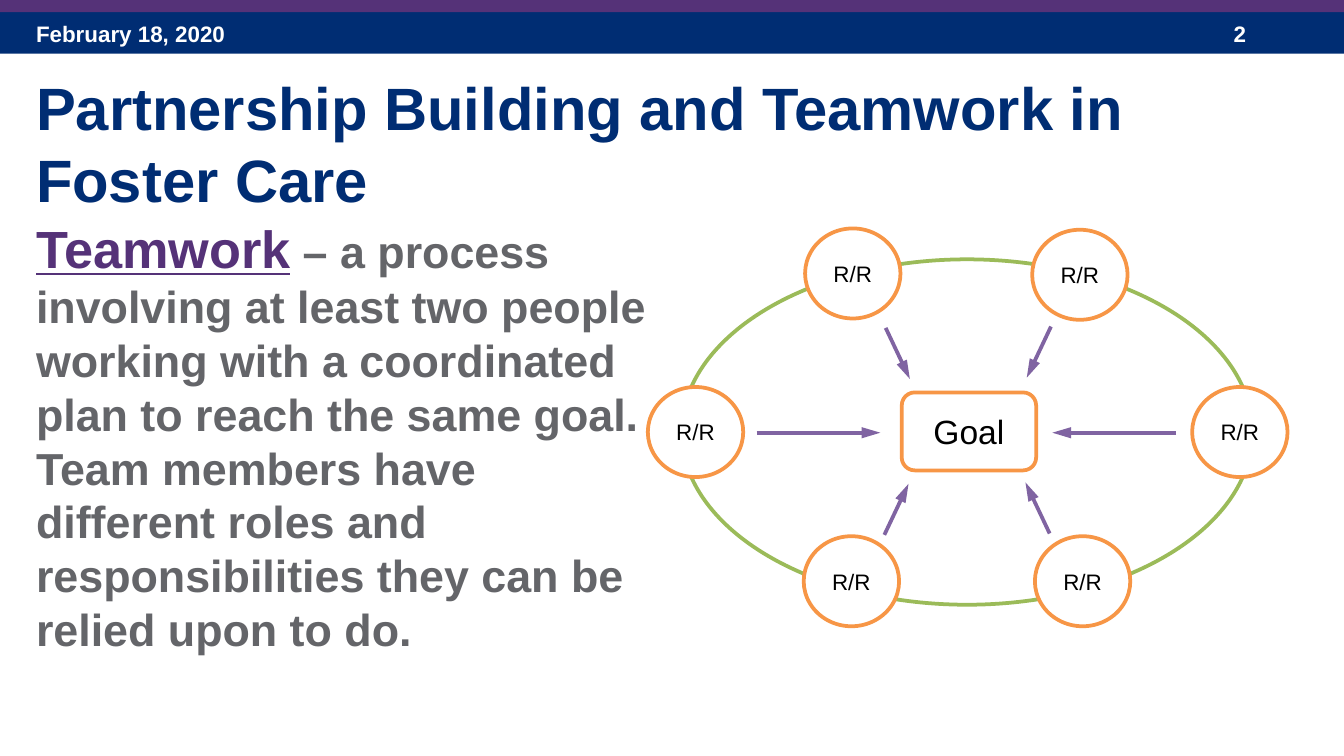
from lxml import etree
from pptx import Presentation
from pptx.dml.color import RGBColor
from pptx.enum import shapes, text
from pptx.oxml.ns import qn
from pptx.util import Inches, Pt

COLORS = {
    "navy": "002D73",
    "purple": "553278",
    "gray": "646569",
    "white": "FFFFFF",
    "black": "000000",
    "green": "9BBB59",
    "orange": "F79646",
    "violet": "8064A2",
}
NODE_SIZE = (0.71, 0.67)
NODES = [(4.82, 2.88), (5.98, 3.99), (7.7, 3.99),
         (8.87, 2.88), (7.68, 1.71), (5.99, 1.7)]
ARROWS = [
    (6.59, 2.44, 6.77, 2.82),
    (8.75, 3.22, 7.83, 3.22),
    (7.82, 2.43, 7.64, 2.81),
    (5.63, 3.22, 6.55, 3.22),
    (6.58, 3.98, 6.76, 3.6),
    (7.81, 3.97, 7.63, 3.59),
]


def color(name):
    return RGBColor.from_string(COLORS[name])


def style_font(font, size, color_name, bold=False):
    font.name = "Arial"
    font.size = Pt(size)
    font.bold = bold
    font.color.rgb = color(color_name)


def add_figure(slide, kind, box, fill, outline=None):
    figure = slide.shapes.add_shape(kind, *map(Inches, box))
    figure.shadow.inherit = False
    figure.fill.solid()
    figure.fill.fore_color.rgb = color(fill)
    if outline:
        figure.line.color.rgb = color(outline)
        figure.line.width = Pt(2)
    else:
        figure.line.fill.background()
    return figure


def add_label(figure, wording, size):
    frame = figure.text_frame
    frame.margin_left = frame.margin_right = 0
    frame.margin_top = frame.margin_bottom = 0
    frame.vertical_anchor = text.MSO_ANCHOR.MIDDLE
    label = frame.paragraphs[0]
    label.text = wording
    label.alignment = text.PP_ALIGN.CENTER
    style_font(label.font, size, "black")


def add_text(slide, box, wording, size, color_name):
    frame = slide.shapes.add_textbox(*map(Inches, box)).text_frame
    frame.word_wrap = True
    line = frame.paragraphs[0]
    line.text = wording
    style_font(line.font, size, color_name, bold=True)
    return line


def add_definition(slide, box, term, meaning):
    definition = add_text(slide, box, "", 24, "gray")
    keyword = definition.add_run()
    keyword.text = term
    style_font(keyword.font, 28, "purple", bold=True)
    keyword.font.underline = True
    definition.add_run().text = meaning


def add_arrow(slide, ends):
    arrow = slide.shapes.add_connector(
        shapes.MSO_CONNECTOR.STRAIGHT, *map(Inches, ends))
    arrow.line.color.rgb = color("violet")
    arrow.line.width = Pt(2)
    etree.SubElement(arrow.line._get_or_add_ln(), qn("a:tailEnd"),
                     type="triangle", w="med", len="lg")
    etree.SubElement(arrow._element.spPr, qn("a:effectLst"))


def add_header(slide):
    rectangle = shapes.MSO_SHAPE.RECTANGLE
    add_figure(slide, rectangle, (0, 0.07, 10, 0.33), "navy")
    add_figure(slide, rectangle, (0, 0, 10, 0.09), "purple")
    add_text(slide, (0.17, 0.1, 2.33, 0.3), "February 18, 2020", 12, "white")
    add_text(slide, (9.08, 0.1, 0.75, 0.3), "2", 12, "white")


def add_team_diagram(slide):
    add_figure(slide, shapes.MSO_SHAPE.OVAL,
               (5.07, 1.93, 4.25, 2.57), "white", "green")
    goal = add_figure(slide, shapes.MSO_SHAPE.ROUNDED_RECTANGLE,
                      (6.71, 2.92, 1, 0.58), "white", "orange")
    add_label(goal, "Goal", 18)
    for corner in NODES:
        role = add_figure(slide, shapes.MSO_SHAPE.FLOWCHART_CONNECTOR,
                          corner + NODE_SIZE, "white", "orange")
        add_label(role, "R/R", 12)
    for ends in ARROWS:
        add_arrow(slide, ends)


def main():
    deck = Presentation()
    deck.slide_width, deck.slide_height = Inches(10), Inches(10) * 9 // 16
    slide = deck.slides.add_slide(deck.slide_layouts[6])
    add_header(slide)
    add_text(slide, (0.17, 0.48, 9.5, 0.7),
             "Partnership Building and Teamwork in Foster Care", 32, "navy")
    add_definition(
        slide, (0.17, 1.56, 4.74, 3.17), "Teamwork",
        " – a process involving at least two people working with a "
        "coordinated plan to reach the same goal. Team members have "
        "different roles and responsibilities they can be relied upon to do.")
    add_team_diagram(slide)
    deck.save("out.pptx")


if __name__ == "__main__":
    main()
